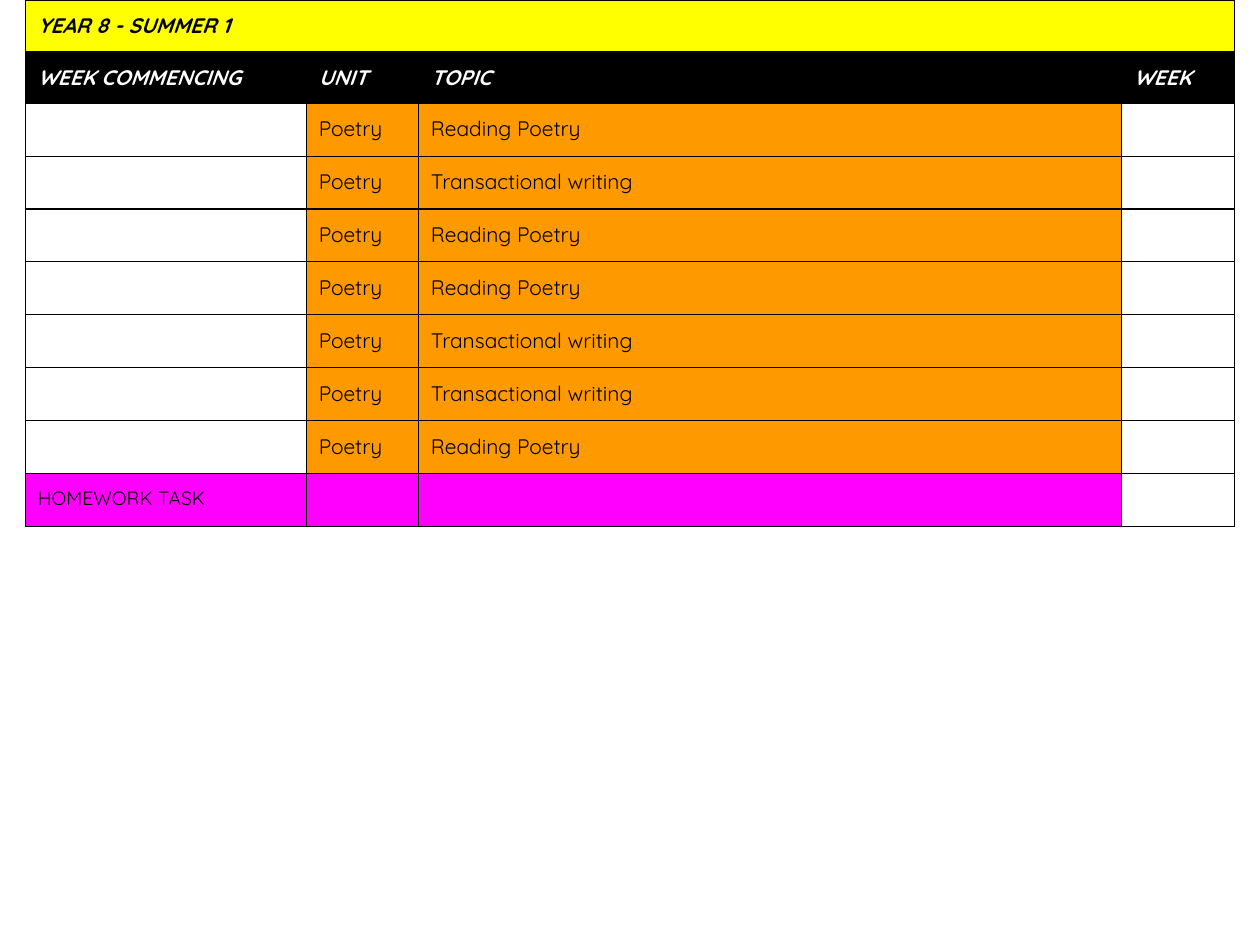
import pptx
import pptx.dml.color
import pptx.oxml
import pptx.oxml.ns
import pptx.util
from pptx.util import Inches

BLACK, WHITE = "000000", "FFFFFF"
YELLOW, ORANGE, MAGENTA = "FFFF00", "FF9900", "FF00FF"
COLUMN_WIDTHS = [2.23, 0.89, 5.58, 0.9]
HEADING_HEIGHT, WEEK_HEIGHT = 0.41, 0.42
HEADINGS = ["WEEK COMMENCING", "UNIT", "TOPIC", "WEEK"]
READING, WRITING = "Reading Poetry", "Transactional writing"
TOPICS = [READING, WRITING, READING, READING, WRITING, WRITING, READING]


def rgb(value):
    return pptx.dml.color.RGBColor.from_string(value)


def draw_borders(cell):
    """Put a thin black line on each side; call before setting the fill."""
    properties = cell._tc.get_or_add_tcPr()
    for side in ("lnL", "lnR", "lnT", "lnB"):
        properties.append(pptx.oxml.parse_xml(
            f'<a:{side} {pptx.oxml.ns.nsdecls("a")} w="{pptx.util.Pt(0.75)}">'
            f'<a:solidFill><a:srgbClr val="{BLACK}"/></a:solidFill></a:{side}>'))


def fill_cell(cell, color):
    cell.fill.solid()
    cell.fill.fore_color.rgb = rgb(color)


def write_cell(cell, text, color=BLACK, size=12, heading=False):
    cell.margin_left = cell.margin_right = Inches(0.1)
    cell.margin_top = cell.margin_bottom = Inches(0.1)
    cell.text_frame.text = text
    font = cell.text_frame.paragraphs[0].runs[0].font
    font.name = "Quicksand"
    font.size = pptx.util.Pt(size)
    font.bold = font.italic = heading
    font.color.rgb = rgb(color)


def add_plan_table(slide):
    heights = [HEADING_HEIGHT] * 2 + [WEEK_HEIGHT] * (len(TOPICS) + 1)
    plan = slide.shapes.add_table(
        len(heights), len(COLUMN_WIDTHS), Inches(0.2), Inches(0),
        Inches(sum(COLUMN_WIDTHS)), Inches(sum(heights))).table
    plan.first_row = plan.horz_banding = False
    for column, width in zip(plan.columns, COLUMN_WIDTHS):
        column.width = Inches(width)
    for row, height in zip(plan.rows, heights):
        row.height = Inches(height)
    for cell in plan.iter_cells():
        draw_borders(cell)
        cell.fill.background()
    return plan


def fill_headings(plan):
    term = plan.cell(0, 0)
    term.merge(plan.cell(0, len(HEADINGS) - 1))
    fill_cell(term, YELLOW)
    write_cell(term, "YEAR 8 - SUMMER 1", heading=True)
    for column, heading in enumerate(HEADINGS):
        cell = plan.cell(1, column)
        fill_cell(cell, BLACK)
        write_cell(cell, heading, WHITE, heading=True)


def fill_weeks(plan):
    for row, topic in enumerate(TOPICS, start=2):
        for column, text in enumerate(["Poetry", topic], start=1):
            cell = plan.cell(row, column)
            fill_cell(cell, ORANGE)
            write_cell(cell, text)


def fill_homework(plan):
    homework_row = len(plan.rows) - 1
    for column in range(3):
        fill_cell(plan.cell(homework_row, column), MAGENTA)
    write_cell(plan.cell(homework_row, 0), "HOMEWORK TASK", size=11)


def main():
    presentation = pptx.Presentation()
    presentation.slide_width = Inches(10)
    presentation.slide_height = Inches(7.5)
    slide = presentation.slides.add_slide(presentation.slide_layouts[6])
    plan = add_plan_table(slide)
    fill_headings(plan)
    fill_weeks(plan)
    fill_homework(plan)
    presentation.save("out.pptx")


if __name__ == "__main__":
    main()
